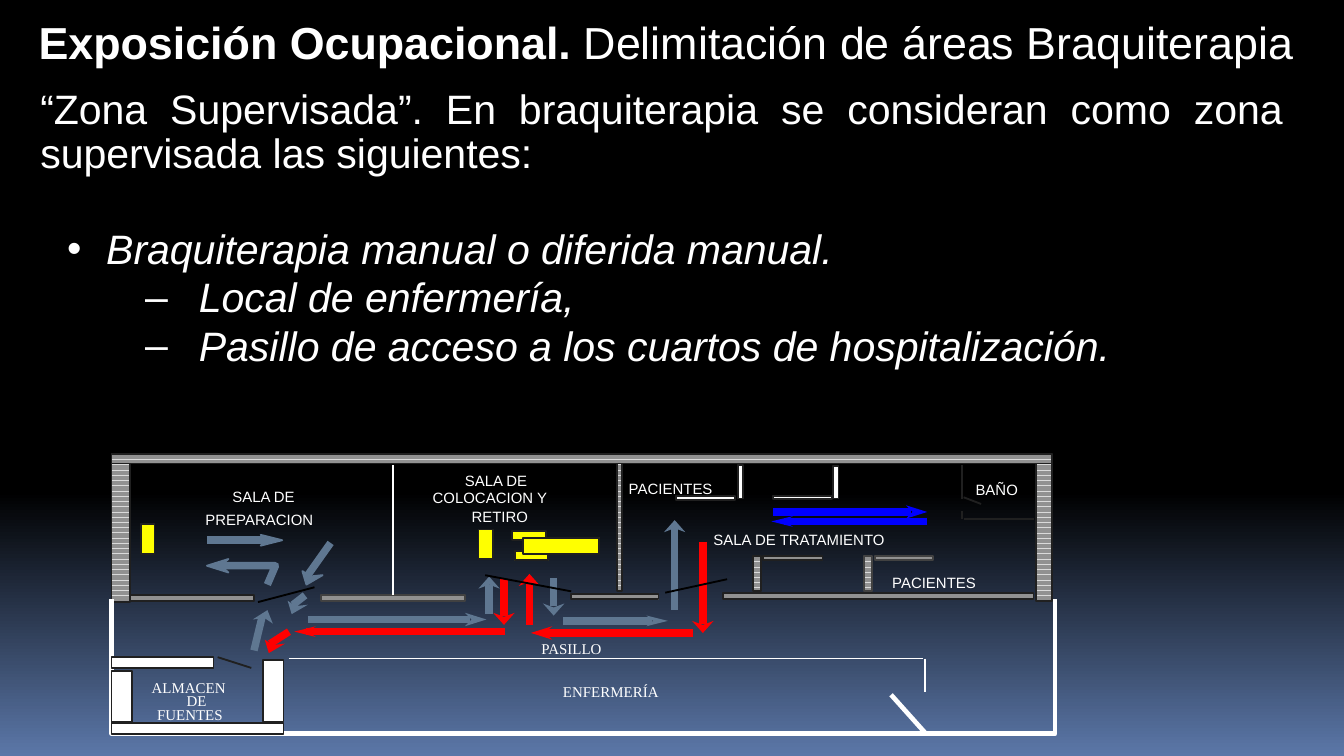
from lxml.etree import SubElement
from pptx import Presentation
from pptx.dml.color import RGBColor
from pptx.enum.dml import MSO_PATTERN
from pptx.enum.shapes import MSO_CONNECTOR, MSO_SHAPE
from pptx.enum.text import MSO_ANCHOR, MSO_AUTO_SIZE, PP_ALIGN
from pptx.oxml.ns import qn
from pptx.util import Inches, Pt

CELL = Inches(0.01)
WHITE, DARK, GREY, BLACK = "FFFFFF", "202020", "414141", "000000"
STEEL, BLUE, RED, YELLOW = "5F7791", "0000FF", "FF0000", "FFFF00"
SERIF = "Times New Roman"

HEADS = {
    "right": [(-16, -4.5), (-16, 4.5), (-11, 0)],
    "left": [(16, 4.5), (16, -4.5), (10, 0)],
    "down": [(8, -9), (-8, -9), (0, -6)],
    "up": [(-8, 9), (8, 9), (0, 6)],
    "down_left": [(12, -7), (-3, -10), (3, -6)],
    "up_right": [(-11, 7), (4, 10), (-2, 6)],
}
SHAFT_ENDS = {"right": (-12, 0), "left": (9, 0), "down": (0, -7),
              "up": (0, 6), "down_left": (1, -7), "up_right": (-4, 5)}

HATCHED_WALLS = [
    (93, 443, 96, 4, DARK), (83, 338, 14, 110, DARK), (771, 338, 12, 109, DARK),
    (459, 338, 4, 102, DARK), (83, 338, 700, 7, DARK), (538, 441, 231, 5, DARK),
    (425, 442, 65, 4, DARK), (560, 414, 6, 26, DARK), (568, 414, 44, 3, DARK),
    (643, 414, 6, 26, GREY), (651, 414, 43, 3, GREY),
]
WHITE_WALLS = [
    (620, 347, 4, 24), (575, 369, 44, 2), (549, 346, 4, 25), (503, 369, 44, 3),
    (83, 538, 128, 8), (83, 499, 15, 38), (196, 491, 15, 46), (83, 489, 76, 8),
]
FURNITURE = [(383, 410, 25, 7), (381, 395, 25, 7), (389, 400, 57, 12),
             (356, 394, 11, 22), (105, 390, 10, 22)]
PARTITIONS = [
    ((769, 386), (717, 386), DARK, 1), ((716, 346), (716, 371), DARK, 1),
    ((716, 386), (716, 380), DARK, 1), ((717, 370), (730, 375), DARK, 1),
    ((215, 490), (687, 490), WHITE, 1), ((688, 490), (688, 515), WHITE, 1),
    ((162, 489), (187, 497), DARK, 1),
]
DOORS = [
    ((192, 448), (234, 437), BLACK, 1), ((425, 440), (361, 428), BLACK, 1),
    ((495, 441), (541, 431), BLACK, 1), ((689, 546), (663, 517), WHITE, 2.5),
]
ARROWS = [
    ((189, 484), (199, 454), "up_right", STEEL, False),
    ((154, 402), (210, 402), "right", STEEL, True),
    ((246, 404), (228, 435), "down_left", STEEL, True),
    ((227, 443), (217, 457), "down_left", STEEL, False),
    ((229, 461), (362, 461), "right", STEEL, False),
    ((364, 457), (364, 429), "up", STEEL, False),
    ((412, 430), (412, 458), "down", STEEL, False),
    ((419, 462), (497, 462), "right", STEEL, False),
    ((502, 454), (502, 387), "up", STEEL, False),
    ((575, 381), (690, 381), "right", BLUE, False),
    ((690, 388), (574, 388), "left", BLUE, False),
    ((523, 403), (523, 471), "down", RED, False),
    ((516, 471), (395, 471), "left", RED, False),
    ((394, 465), (394, 427), "up", RED, False),
    ((375, 431), (375, 465), "down", RED, False),
    ((376, 470), (219, 470), "left", RED, False),
    ((215, 470), (200, 486), "down_left", RED, False),
]
LABELS = [
    ("ALMACEN", 103, 500, 75, SERIF), ("DE", 129, 510, 35, SERIF),
    ("FUENTES", 107, 520, 69, SERIF), ("SALA DE", 163, 358, 71, "Arial"),
    ("PREPARACION", 143, 375, 102, "Arial"), ("SALA DE", 336, 346, 71, "Arial"),
    ("COLOCACION Y", 312, 359, 109, "Arial"), ("RETIRO", 341, 373, 62, "Arial"),
    ("PACIENTES", 458, 352, 84, "Arial"), ("PACIENTES", 654, 422, 84, "Arial"),
    ("BAÑO", 716, 353, 52, "Arial"), ("SALA DE TRATAMIENTO", 521, 390, 151, "Arial"),
    ("PASILLO", 393, 471, 66, SERIF), ("ENFERMERÍA", 409, 503, 92, SERIF),
]


def color(value):
    return RGBColor.from_string(value)


def cells(*values):
    return [int(v * CELL) for v in values]


def place(shape, *box):
    shape.left, shape.top, shape.width, shape.height = cells(*box)


def add_run(p, text, size, font="Arial", bold=False, italic=False):
    r = p.add_run()
    r.text = text
    f = r.font
    f.name, f.size, f.bold, f.italic = font, Pt(size), bold, italic
    f.color.rgb = color(WHITE)


def set_line(shape, value, width):
    shape.line.color.rgb = color(value)
    shape.line.width = Pt(width)


def add_rect(s, box, edge, fill=None):
    sp = s.shapes.add_shape(MSO_SHAPE.RECTANGLE, *cells(*box))
    sp.shadow.inherit = False
    if fill:
        sp.fill.solid()
        sp.fill.fore_color.rgb = color(fill)
    else:
        sp.fill.patterned()
        sp.fill.pattern = MSO_PATTERN.HORIZONTAL
        sp.fill.fore_color.rgb = color("DADADA")
        sp.fill.back_color.rgb = color("919191")
    set_line(sp, edge, 1)
    return sp


def add_line(s, start, end, value, width):
    line = s.shapes.add_connector(MSO_CONNECTOR.STRAIGHT, *cells(*start, *end))
    set_line(line, value, width)
    SubElement(line._element.spPr, qn("a:effectLst"))
    return line


def add_outline(s, points, fill=None, edge=None, width=1):
    builder = s.shapes.build_freeform(*points[0], scale=CELL)
    builder.add_line_segments(points[1:], close=bool(fill))
    sp = builder.convert_to_shape()
    sp.shadow.inherit = False
    if fill:
        sp.fill.solid()
        sp.fill.fore_color.rgb = color(fill)
    else:
        sp.fill.background()
    if edge:
        set_line(sp, edge, width)
    else:
        sp.line.fill.background()


def add_head(s, tip, direction, value, edged):
    x, y = tip
    first, second, notch = [(x + dx, y + dy) for dx, dy in HEADS[direction]]
    add_outline(s, [first, tip, second, notch], value, value if edged else None)


def add_arrow(s, start, tip, direction, value, edged):
    dx, dy = SHAFT_ENDS[direction]
    add_line(s, start, (tip[0] + dx, tip[1] + dy), value, 4)
    add_head(s, tip, direction, value, edged)


def add_label(s, text, x, y, width, font):
    tf = s.shapes.add_textbox(*cells(x, y, width, 23)).text_frame
    tf.word_wrap = False
    tf.auto_size = MSO_AUTO_SIZE.SHAPE_TO_FIT_TEXT
    add_run(tf.paragraphs[0], text, 8, font)


def set_bullet(p, mark, left, indent):
    pPr = p._p.get_or_add_pPr()
    pPr.set("marL", str(Inches(left)))
    pPr.set("indent", str(Inches(indent)))
    if mark:
        clr = SubElement(pPr, qn("a:buClr"))
        SubElement(clr, qn("a:srgbClr"), val=WHITE)
        SubElement(pPr, qn("a:buFont"), typeface="Arial")
        SubElement(pPr, qn("a:buChar"), char=mark)
    else:
        SubElement(pPr, qn("a:buNone"))


def fill_title(sp):
    place(sp, 17, 6, 957, 50)
    tf = sp.text_frame
    tf.word_wrap, tf.vertical_anchor = True, MSO_ANCHOR.MIDDLE
    tf.auto_size = MSO_AUTO_SIZE.SHAPE_TO_FIT_TEXT
    p = tf.paragraphs[0]
    p.alignment = PP_ALIGN.CENTER
    add_run(p, "Exposición Ocupacional.", 24, bold=True)
    add_run(p, " Delimitación de áreas Braquiterapia", 24)


def fill_body(sp):
    place(sp, 20, 61, 945, 257)
    tf = sp.text_frame
    tf.word_wrap, tf.vertical_anchor = True, MSO_ANCHOR.TOP
    tf.auto_size = MSO_AUTO_SIZE.SHAPE_TO_FIT_TEXT
    items = [
        ("“Zona Supervisada”. En braquiterapia se consideran como zona "
         "supervisada las siguientes:", 0, 2.2, None, 0, 0),
        ("Braquiterapia manual o diferida manual.", 1, 27.7, "•", 0.49, -0.29),
        ("Local de enfermería,", 2, 2.2, "–", 1.18, -0.4),
        ("Pasillo de acceso a los cuartos de hospitalización.", 2, 2.2, "–", 1.18, -0.4),
    ]
    for i, (text, level, before, mark, left, indent) in enumerate(items):
        p = tf.add_paragraph() if i else tf.paragraphs[0]
        p.level, p.alignment = level, PP_ALIGN.JUSTIFY
        p.line_spacing, p.space_before = 0.9, Pt(before)
        set_bullet(p, mark, left, indent)
        add_run(p, text, 22, italic=level > 0)


def set_background(s):
    fill = s.background.fill
    fill.gradient()
    fill.gradient_angle = 270
    for stop, (position, value) in zip(fill.gradient_stops, [(0.65, BLACK), (1, "5B77A8")]):
        stop.position = position
        stop.color.rgb = color(value)


def draw_plan(s):
    for *box, edge in HATCHED_WALLS:
        add_rect(s, box, edge)
    room_wall = add_rect(s, (239, 443, 107, 4), GREY)
    divider = add_line(s, (292.5, 346), (292.5, 443), WHITE, 1)
    divider.end_connect(room_wall, 0)
    add_outline(s, [(83, 446), (83, 546), (785, 546), (785, 446)], edge=WHITE, width=2.5)
    for box in WHITE_WALLS:
        add_rect(s, box, DARK, WHITE)
    for partition in PARTITIONS:
        add_line(s, *partition)
    for box in FURNITURE:
        add_rect(s, box, DARK, YELLOW)
    add_outline(s, [(199, 435), (205, 421), (165, 421)], edge=STEEL, width=4)
    add_head(s, (154, 421), "left", STEEL, True)
    for arrow in ARROWS:
        add_arrow(s, *arrow)
    for door in DOORS:
        add_line(s, *door)
    for label in LABELS:
        add_label(s, *label)


def main():
    prs = Presentation()
    prs.slide_width, prs.slide_height = Pt(720), Pt(405)
    s = prs.slides.add_slide(prs.slide_layouts[1])
    set_background(s)
    fill_title(s.shapes.title)
    fill_body(s.placeholders[1])
    draw_plan(s)
    prs.save("out.pptx")


if __name__ == "__main__":
    main()
